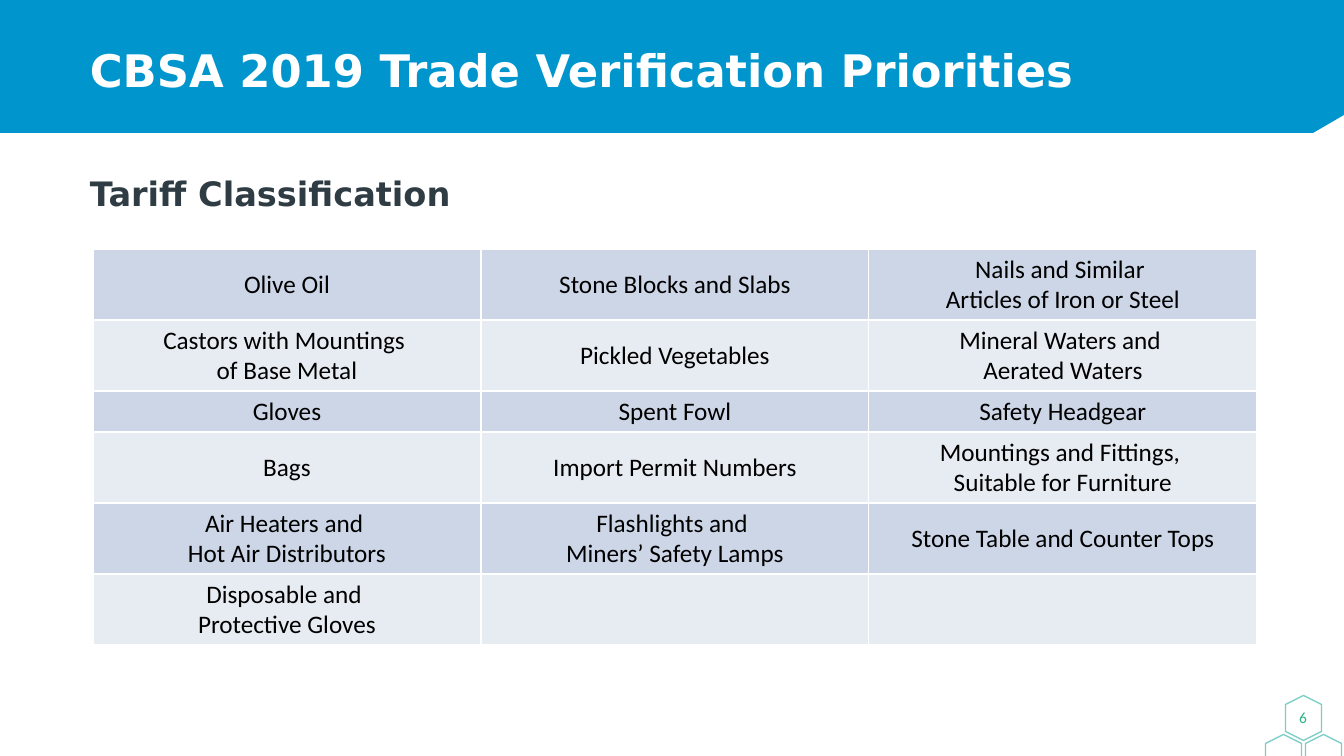
from typing import NamedTuple

from lxml.etree import SubElement
from pptx import Presentation
from pptx.dml.color import RGBColor
from pptx.enum.shapes import MSO_SHAPE
from pptx.enum.text import MSO_ANCHOR as ANCHOR, PP_ALIGN as ALIGN
from pptx.oxml.ns import qn
from pptx.util import Emu, Pt

SLIDE_W, SLIDE_H = 1344, 756
SCALE = 12192000 / SLIDE_W

BLUE = RGBColor(0x00, 0x96, 0xCD)
TEAL = RGBColor(0x00, 0x99, 0x8D)
GREEN = RGBColor(0x2D, 0xAF, 0x88)
SLATE = RGBColor(0x2F, 0x3C, 0x43)
WHITE = RGBColor(0xFF, 0xFF, 0xFF)
BLACK = RGBColor(0x00, 0x00, 0x00)
ROW_FILLS = (RGBColor(0xCC, 0xD6, 0xE7), RGBColor(0xE7, 0xEC, 0xF3))

HEADING_FONT, BODY_FONT = "DejaVu Sans", "Calibri"

BAND = [(0, 0), (1344, 0), (1344, 115), (1313, 133), (0, 133)]
HEXAGONS = [(1281, 700), (1301, 739), (1261, 739)]

TABLE_LEFT, TABLE_TOP, COL_W = 93, 249, 388
ONE_LINE_H, TWO_LINE_H = 41, 71
PRIORITIES = [
    ("Olive Oil", "Stone Blocks and Slabs", "Nails and Similar \vArticles of Iron or Steel"),
    ("Castors with Mountings \vof Base Metal", "Pickled Vegetables", "Mineral Waters and \vAerated Waters"),
    ("Gloves", "Spent Fowl", "Safety Headgear"),
    ("Bags", "Import Permit Numbers", "Mountings and Fittings, \vSuitable for Furniture"),
    ("Air Heaters and \vHot Air Distributors", "Flashlights and \vMiners’ Safety Lamps", "Stone Table and Counter Tops"),
    ("Disposable and \vProtective Gloves", "", ""),
]


class Label(NamedTuple):
    text: str
    box: tuple[int, int, int, int]
    font: str
    size: int
    color: RGBColor
    bold: bool = False
    anchor: ANCHOR = ANCHOR.MIDDLE
    align: ALIGN = ALIGN.LEFT
    spacing: float = 1.0


LABELS = [
    Label("CBSA 2019 Trade Verification Priorities", (80, 19, 1185, 108),
          HEADING_FONT, 32, WHITE, bold=True, spacing=0.9),
    Label("6", (1283, 701, 40, 33), BODY_FONT, 11, GREEN, align=ALIGN.CENTER),
    Label("Tariff Classification", (80, 168, 1239, 445),
          HEADING_FONT, 24, SLATE, bold=True, anchor=ANCHOR.TOP),
]


def px(n: int) -> Emu:
    return Emu(round(n * SCALE))


def set_font(p, name: str, size: int, color: RGBColor, bold: bool = False) -> None:
    p.font.name, p.font.size, p.font.bold = name, Pt(size), bold
    p.font.color.rgb = color


def add_band(slide) -> None:
    builder = slide.shapes.build_freeform(*BAND[0], scale=SCALE)
    builder.add_line_segments(BAND[1:], close=True)
    sp = builder.convert_to_shape()
    sp.shadow.inherit = False
    sp.fill.solid()
    sp.fill.fore_color.rgb = BLUE
    sp.line.fill.background()


def add_hexagon(slide, left: int, top: int) -> None:
    sp = slide.shapes.add_shape(MSO_SHAPE.HEXAGON, px(left), px(top), px(45), px(36))
    sp.rotation = 90
    sp.shadow.inherit = False
    sp.fill.background()
    sp.line.color.rgb = TEAL
    sp.line.width = Pt(1)
    color = sp.line._ln.find(qn("a:solidFill"))[0]
    SubElement(color, qn("a:alpha"), val="50000")


def add_label(slide, label: Label) -> None:
    tf = slide.shapes.add_textbox(*map(px, label.box)).text_frame
    tf.word_wrap = True
    tf.vertical_anchor = label.anchor
    p = tf.paragraphs[0]
    p.text = label.text
    p.alignment = label.align
    p.line_spacing = label.spacing
    set_font(p, label.font, label.size, label.color, label.bold)


def add_borders(cell) -> None:
    """Give the cell white borders; call before its fill is set."""
    tc_pr = cell._tc.get_or_add_tcPr()
    for side in ("lnL", "lnR", "lnT", "lnB"):
        ln = SubElement(tc_pr, qn(f"a:{side}"), w=str(Pt(1)))
        SubElement(SubElement(ln, qn("a:solidFill")), qn("a:srgbClr"), val=str(WHITE))


def add_priorities(slide) -> None:
    heights = [TWO_LINE_H if "\v" in "".join(row) else ONE_LINE_H for row in PRIORITIES]
    n_cols = len(PRIORITIES[0])
    table = slide.shapes.add_table(
        len(PRIORITIES), n_cols, px(TABLE_LEFT), px(TABLE_TOP),
        px(n_cols * COL_W), px(sum(heights))).table
    table.first_row = table.horz_banding = False
    for col in table.columns:
        col.width = px(COL_W)
    for i, (row, height) in enumerate(zip(PRIORITIES, heights)):
        table.rows[i].height = px(height)
        for j, text in enumerate(row):
            cell = table.cell(i, j)
            add_borders(cell)
            cell.fill.solid()
            cell.fill.fore_color.rgb = ROW_FILLS[i % 2]
            cell.vertical_anchor = ANCHOR.MIDDLE
            p = cell.text_frame.paragraphs[0]
            p.text = text
            p.alignment = ALIGN.CENTER
            set_font(p, BODY_FONT, 18, BLACK)


def main() -> None:
    prs = Presentation()
    prs.slide_width, prs.slide_height = px(SLIDE_W), px(SLIDE_H)
    slide = prs.slides.add_slide(prs.slide_layouts[6])
    add_band(slide)
    for left, top in HEXAGONS:
        add_hexagon(slide, left, top)
    for label in LABELS:
        add_label(slide, label)
    add_priorities(slide)
    prs.save("out.pptx")


if __name__ == "__main__":
    main()
